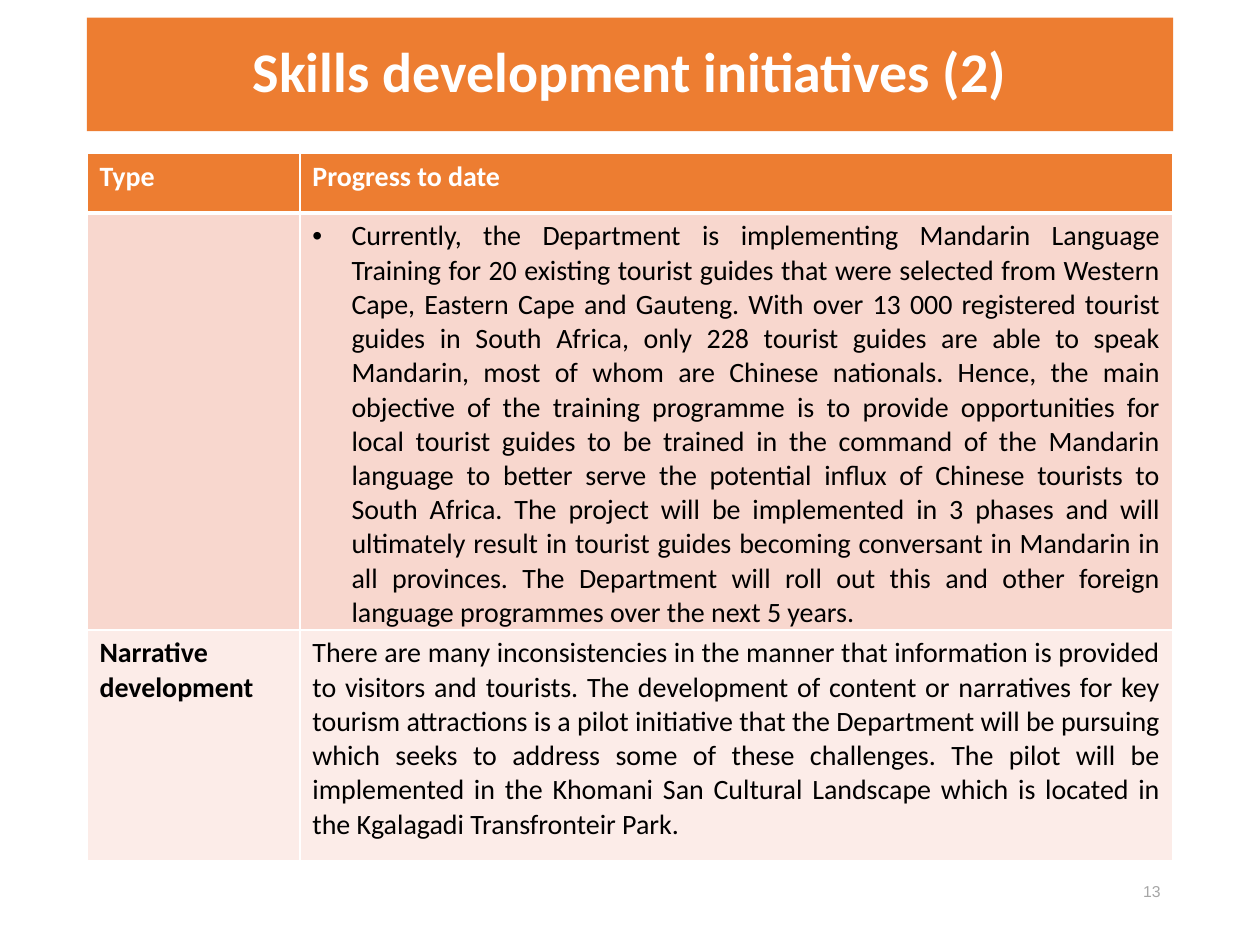
"""Build the skills development slide with its progress table."""
from dataclasses import dataclass

from lxml.etree import SubElement
from pptx import Presentation
from pptx.dml.color import RGBColor
from pptx.enum.text import MSO_ANCHOR, PP_ALIGN
from pptx.oxml.ns import qn
from pptx.util import Inches, Pt


@dataclass(frozen=True)
class Theme:
    accent: str = "ED7D31"
    band_dark: str = "F8D7CE"
    band_light: str = "FCECE8"
    light: str = "FFFFFF"
    dark: str = "000000"
    muted: str = "A6A6A6"
    font: str = "Calibri"
    number_font: str = "Arial"
    title_size: float = 32
    table_size: float = 16
    number_size: float = 9
    rule: float = 1
    header_rule: float = 3


@dataclass(frozen=True)
class Entry:
    text: str
    bold: bool = False
    justified: bool = False
    bulleted: bool = False


@dataclass(frozen=True)
class Row:
    height: float
    fill: str
    color: str
    entries: tuple[Entry, Entry]
    top_rule: float
    bottom_rule: float


THEME = Theme()
WIDTH, HEIGHT = 10, 7.5
MARGIN = 0.69
CONTENT_WIDTH = WIDTH - 2 * MARGIN
TYPE_WIDTH = 1.69
BULLET_INDENT = 0.31

TRAINING = (
    "Currently, the Department is implementing Mandarin Language Training for 20 existing "
    "tourist guides that were selected from Western Cape, Eastern Cape and Gauteng. With over "
    "13 000 registered tourist guides in South Africa, only 228 tourist guides are able to speak "
    "Mandarin, most of whom are Chinese nationals. Hence, the main objective of the training "
    "programme is to provide opportunities for local tourist guides to be trained in the command "
    "of the Mandarin language to better serve the potential influx of Chinese tourists to South "
    "Africa. The project will be implemented in 3 phases and will ultimately result in tourist "
    "guides becoming conversant in Mandarin in all provinces. The Department will roll out this "
    "and other foreign language programmes over the next 5 years."
)
NARRATIVE = (
    "There are many inconsistencies in the manner that information is provided to visitors and "
    "tourists. The development of content or narratives for key tourism attractions is a pilot "
    "initiative that the Department will be pursuing which seeks to address some of these "
    "challenges. The pilot will be implemented in the Khomani San Cultural Landscape which is "
    "located in the Kgalagadi Transfronteir Park. "
)
ROWS = (
    Row(0.47, THEME.accent, THEME.light,
        (Entry("Type", bold=True), Entry("Progress to date", bold=True)),
        THEME.rule, THEME.header_rule),
    Row(3.31, THEME.band_dark, THEME.dark,
        (Entry(""), Entry(TRAINING, justified=True, bulleted=True)),
        THEME.header_rule, THEME.rule),
    Row(1.83, THEME.band_light, THEME.dark,
        (Entry("Narrative development", bold=True), Entry(NARRATIVE, justified=True)),
        THEME.rule, THEME.rule),
)


def add_run(paragraph, text: str, size: float, color: str, font: str, bold: bool = False) -> None:
    """Append one formatted run to a paragraph."""
    run = paragraph.add_run()
    run.text = text
    run.font.name, run.font.size, run.font.bold = font, Pt(size), bold
    run.font.color.rgb = RGBColor.from_string(color)


def add_bullet(paragraph) -> None:
    """Give a paragraph a hanging round bullet."""
    properties = paragraph._p.get_or_add_pPr()
    properties.set("marL", str(Inches(BULLET_INDENT)))
    properties.set("indent", str(-Inches(BULLET_INDENT)))
    SubElement(properties, qn("a:buFont"), typeface=THEME.number_font)
    SubElement(properties, qn("a:buChar"), char="•")


def add_borders(cell, row: Row) -> None:
    """Draw the four white rules around a cell."""
    properties = cell._tc.get_or_add_tcPr()
    rules = {"L": THEME.rule, "R": THEME.rule, "T": row.top_rule, "B": row.bottom_rule}
    for side, weight in rules.items():
        line = SubElement(properties, qn(f"a:ln{side}"), w=str(Pt(weight)))
        fill = SubElement(line, qn("a:solidFill"))
        SubElement(fill, qn("a:srgbClr"), val=THEME.light)


def fill_cell(cell, entry: Entry, row: Row) -> None:
    """Format a table cell and write its entry."""
    add_borders(cell, row)
    cell.fill.solid()
    cell.fill.fore_color.rgb = RGBColor.from_string(row.fill)
    paragraph = cell.text_frame.paragraphs[0]
    paragraph.font.size = Pt(THEME.table_size)
    if entry.justified:
        paragraph.alignment = PP_ALIGN.JUSTIFY
    if entry.bulleted:
        add_bullet(paragraph)
    if entry.text:
        add_run(paragraph, entry.text, THEME.table_size, row.color, THEME.font, entry.bold)


def add_title(slide, text: str) -> None:
    """Turn the title placeholder into the banner."""
    title = slide.shapes.title
    title.left, title.top = Inches(MARGIN), Inches(0.14)
    title.width, title.height = Inches(CONTENT_WIDTH), Inches(0.9)
    title.fill.solid()
    title.fill.fore_color.rgb = RGBColor.from_string(THEME.accent)
    title.text_frame.vertical_anchor = MSO_ANCHOR.MIDDLE
    paragraph = title.text_frame.paragraphs[0]
    paragraph.alignment = PP_ALIGN.CENTER
    paragraph.line_spacing = 0.9
    add_run(paragraph, text, THEME.title_size, THEME.light, THEME.font, bold=True)


def add_progress_table(slide, rows: tuple[Row, ...]) -> None:
    """Add the table of initiatives and their progress."""
    height = sum(row.height for row in rows)
    table = slide.shapes.add_table(
        len(rows), 2, Inches(MARGIN), Inches(1.22), Inches(CONTENT_WIDTH), Inches(height)
    ).table
    for column, width in zip(table.columns, (TYPE_WIDTH, CONTENT_WIDTH - TYPE_WIDTH)):
        column.width = Inches(width)
    for table_row, row in zip(table.rows, rows):
        table_row.height = Inches(row.height)
        for cell, entry in zip(table_row.cells, row.entries):
            fill_cell(cell, entry, row)


def add_page_number(slide, number: str) -> None:
    """Write the page number at the lower right."""
    width = 1.21
    box = slide.shapes.add_textbox(
        Inches(WIDTH - MARGIN - width), Inches(6.95), Inches(width), Inches(0.4)
    )
    frame = box.text_frame
    frame.word_wrap = True
    frame.vertical_anchor = MSO_ANCHOR.TOP
    paragraph = frame.paragraphs[0]
    paragraph.alignment = PP_ALIGN.RIGHT
    add_run(paragraph, number, THEME.number_size, THEME.muted, THEME.number_font)


def main() -> None:
    """Assemble and save the slide."""
    presentation = Presentation()
    presentation.slide_width, presentation.slide_height = Inches(WIDTH), Inches(HEIGHT)
    slide = presentation.slides.add_slide(presentation.slide_layouts.get_by_name("Title Only"))
    add_page_number(slide, "13")
    add_title(slide, "Skills development initiatives (2)")
    add_progress_table(slide, ROWS)
    presentation.save("out.pptx")


if __name__ == "__main__":
    main()
